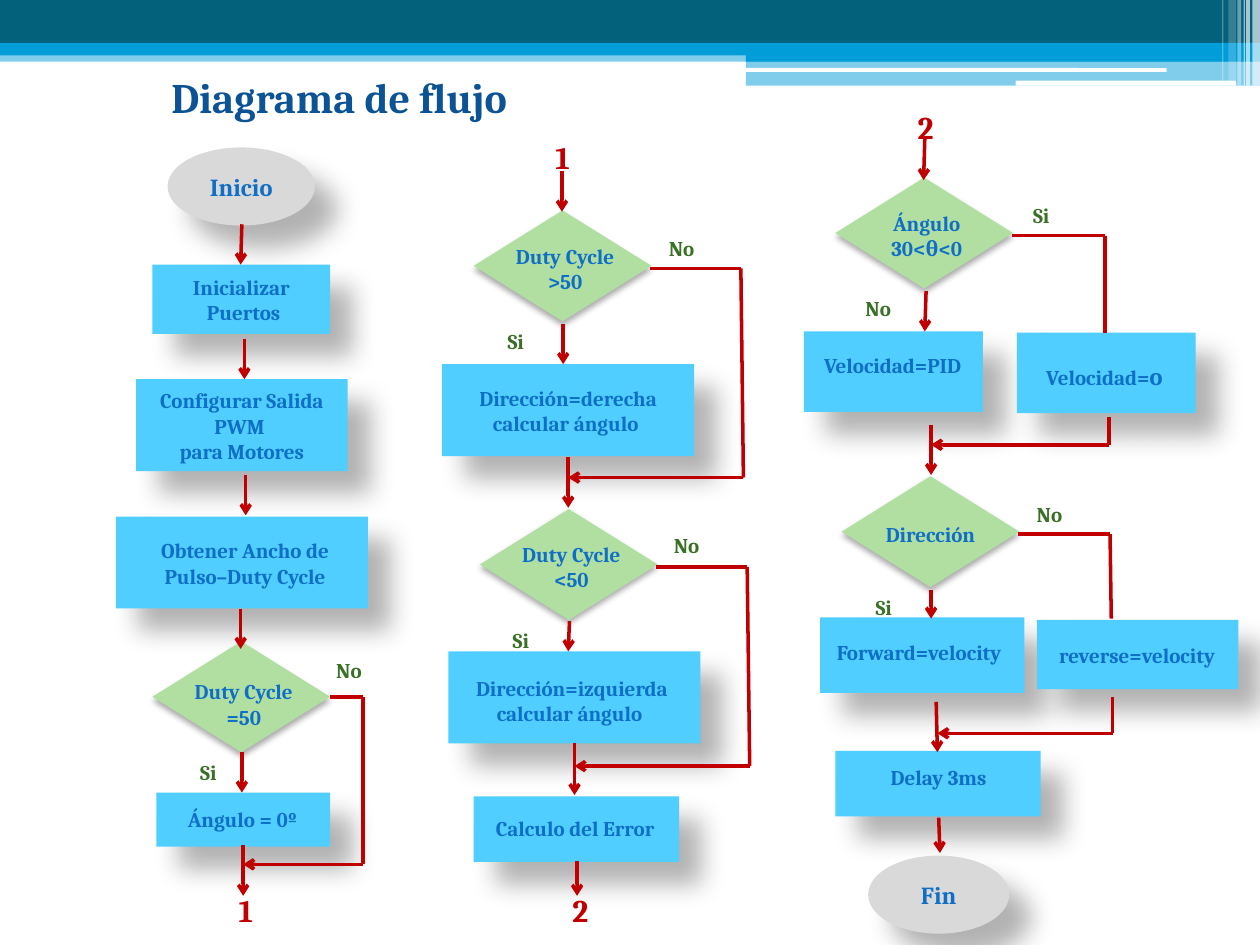
from pptx import Presentation, util as u
from pptx.dml.color import RGBColor
from pptx.enum import shapes as s, text as t
from pptx.oxml import parse_xml
from pptx.oxml.ns import nsdecls, qn
from lxml import etree

FONT = "Cambria"
BLUE, RED, GREEN = "0F6FC6", "C00000", "387026"
KIND = s.MSO_SHAPE
LEFT, MID = t.PP_ALIGN.LEFT, t.PP_ALIGN.CENTER

bands = [
    (0, 0.4, 10, 0.09, "009DD9", 50),
    (0, 0, 10, 0.34, "04617B", 100),
    (0, 0.34, 10, 0.1, "009DD9", 100),
    (5.92, 0.39, 4.08, 0.1, "009DD9", 100),
    (5.92, 0.48, 4.08, 0.2, "009DD9", 50),
]
pills = [(5.91, 0.54, 3.35, 0.03), (8.06, 0.64, 1.75, 0.04)]
stripes = [
    (9.94, 0.06, 0.68, 65), (9.89, 0.03, 0.68, 65), (9.87, 0.01, 0.68, 60),
    (9.82, 0.03, 0.68, 40), (9.75, 0.06, 0.64, 20), (9.7, 0.01, 0.64, 30),
]
boxes = [
    (1.21, 2.1, 1.41, 0.55), (1.08, 3.01, 1.68, 0.73), (0.92, 4.1, 2, 0.73),
    (1.24, 6.29, 1.38, 0.43), (3.51, 2.89, 2, 0.73), (3.56, 5.17, 2, 0.73),
    (3.76, 6.32, 1.63, 0.52), (6.38, 2.63, 1.42, 0.64), (6.51, 4.9, 1.62, 0.6),
    (6.63, 5.96, 1.63, 0.52), (8.07, 2.64, 1.42, 0.64), (8.23, 4.92, 1.6, 0.55),
]
tests = [(1.21, 5.09), (3.76, 1.67), (3.81, 4.04), (6.63, 1.41), (6.68, 3.78)]
ends = [("Inicio", 1.33, 1.17, 1.17), ("Fin", 6.89, 6.79, 1.12)]

arrows = [
    [(1.92, 1.78), (1.91, 2.1)], [(1.94, 2.69), (1.94, 3.01)],
    [(1.95, 3.77), (1.95, 4.09)], [(1.91, 4.83), (1.91, 5.15)],
    [(1.92, 5.97), (1.92, 6.29)], [(1.93, 6.71), (1.93, 7.11)],
    [(4.46, 1.36), (4.46, 1.68)], [(4.47, 2.57), (4.47, 2.89)],
    [(4.51, 3.63), (4.51, 4.03)], [(4.52, 4.93), (4.51, 5.17)],
    [(4.56, 5.9), (4.56, 6.31)], [(4.58, 6.83), (4.58, 7.11)],
    [(7.34, 1.1), (7.33, 1.43)], [(7.35, 2.31), (7.34, 2.63)],
    [(7.39, 3.37), (7.39, 3.77)], [(7.39, 4.68), (7.39, 4.91)],
    [(7.43, 5.57), (7.44, 5.97)], [(7.45, 6.49), (7.46, 6.77)],
    [(2.62, 5.53), (2.88, 5.53), (2.88, 6.86), (1.93, 6.86)],
    [(5.16, 2.13), (5.88, 2.13), (5.9, 3.79), (4.51, 3.79)],
    [(5.21, 4.5), (5.93, 4.5), (5.95, 6.08), (4.56, 6.08)],
    [(8.8, 3.31), (8.8, 3.53), (7.39, 3.53)],
    [(8.83, 5.53), (8.83, 5.82), (7.44, 5.82)],
]
plain = [
    [(8.03, 1.87), (8.77, 1.87), (8.77, 2.64)],
    [(8.08, 4.24), (8.81, 4.24), (8.82, 4.91)],
]

labels = [
    (["Configurar Salida PWM ", "para Motores"], 1.12, 3.03, 1.6, 3),
    (["Obtener Ancho de Pulso–Duty Cycle"], 1.05, 4.22, 1.79, 2),
    (["Duty Cycle =50"], 1.35, 5.34, 1.17, 2),
    (["Duty Cycle >50"], 3.9, 1.88, 1.17, 2),
    (["Dirección=derecha calcular ángulo "], 3.56, 3.01, 1.9, 2),
    (["Duty Cycle <50"], 3.95, 4.25, 1.17, 2),
    (["Dirección=izquierda calcular ángulo "], 3.51, 5.31, 2.06, 2),
    (["Ángulo 30<θ<0"], 6.77, 1.62, 1.17, 2),
    (["Velocidad=PID"], 6.31, 2.75, 1.55, 1),
    (["Dirección"], 6.8, 4.09, 1.17, 1),
    (["Forward=velocity"], 6.4, 5.03, 1.79, 1),
    (["reverse=velocity"], 8.13, 5.05, 1.79, 1),
]
tight = [
    (["Inicializar", " Puertos"], 1.37, 2.13, 1.09, 2),
    (["Ángulo = 0º"], 1.31, 6.35, 1.23, 1),
    (["Calculo del Error"], 3.72, 6.42, 1.69, 1),
    (["Delay 3ms"], 6.9, 6.02, 1.1, 1),
]
marks = [("1", 1.74, 7.02, 0.42), ("1", 4.23, 1.05, 0.47),
         ("2", 4.38, 7.02, 0.45), ("2", 7.12, 0.81, 0.45)]
flags = [
    ("No", 2.57, 5.17, 0.63), ("Si", 1.49, 5.98, 0.58),
    ("No", 5.21, 1.82, 0.63), ("Si", 3.93, 2.56, 0.42),
    ("No", 5.25, 4.18, 0.63), ("Si", 3.97, 4.93, 0.42),
    ("No", 6.77, 2.3, 0.45), ("Si", 8.1, 1.56, 0.42),
    ("No", 8.13, 3.93, 0.63), ("Si", 6.85, 4.67, 0.42),
]
DEEP = (30, 15, 18, 45)
SOFT = (32, 3.5, 2.2, 90)

deck = Presentation()
deck.slide_width, deck.slide_height = u.Inches(10), u.Inches(7.5)
slide = deck.slides.add_slide(deck.slide_layouts[5])


def rgb(code):
    return RGBColor.from_string(code)


def inch(*nums):
    return [u.Inches(n) for n in nums]


def shape(kind, at, fill, alpha=100, glow=None):
    item = slide.shapes.add_shape(kind, *inch(*at))
    item.shadow.inherit = False
    item.fill.solid()
    item.fill.fore_color.rgb = rgb(fill)
    item.line.fill.background()
    if alpha < 100:
        tone = item.fill._xPr.find(".//" + qn("a:srgbClr"))
        etree.SubElement(tone, qn("a:alpha"), val=str(alpha * 1000))
    if glow:
        dark, blur, dist, turn = glow
        item._element.spPr.find(qn("a:effectLst")).append(parse_xml(
            f'<a:outerShdw {nsdecls("a")} blurRad="{u.Pt(blur)}" '
            f'dist="{u.Pt(dist)}" dir="{turn * 60000}" algn="ctr" '
            f'rotWithShape="0"><a:srgbClr val="000000">'
            f'<a:alpha val="{dark * 1000}"/></a:srgbClr></a:outerShdw>'))
    return item


def add_run(para, words, size, color):
    run = para.add_run()
    run.text = words
    font = run.font
    font.name, font.size, font.bold = FONT, u.Pt(size), True
    font.color.rgb = rgb(color)


def write(frame, lines, size, color, align=MID):
    for n, words in enumerate(lines):
        para = frame.add_paragraph() if n else frame.paragraphs[0]
        para.alignment = align
        add_run(para, words, size, color)


def label(lines, at, size=12, color=BLUE, align=MID, wrap=True):
    frame = slide.shapes.add_textbox(*inch(*at)).text_frame
    frame.word_wrap = wrap
    write(frame, lines, size, color, align)
    return frame


def trace(points, arrow):
    for n, (a, b) in enumerate(zip(points, points[1:]), 2):
        line = slide.shapes.add_connector(
            s.MSO_CONNECTOR.STRAIGHT, *inch(*a, *b))
        line.line.color.rgb = rgb(RED)
        line.line.width = u.Pt(2)
        if arrow and n == len(points):
            etree.SubElement(line.line._get_or_add_ln(),
                             qn("a:tailEnd"), type="arrow")
        etree.SubElement(line._element.spPr, qn("a:effectLst"))


for *at, fill, alpha in bands:
    shape(KIND.RECTANGLE, at, fill, alpha)
for at in pills:
    shape(KIND.ROUNDED_RECTANGLE, at, "FFFFFF")
for x, w, h, alpha in stripes:
    shape(KIND.RECTANGLE, (x, 0, w, h), "FFFFFF", alpha)

title = slide.shapes.title
title.left, title.top, title.width, title.height = inch(1.26, 0.52, 4.83, 0.5)
title.text_frame.vertical_anchor = t.MSO_ANCHOR.TOP
write(title.text_frame, ["Diagrama de flujo"], 24, "0B5394", LEFT)

for at in boxes:
    shape(KIND.RECTANGLE, at, "4FCEFF", glow=DEEP)
for x, y in tests:
    shape(KIND.DIAMOND, (x, y, 1.41, 0.88), "B0DFA1", glow=SOFT)
for words, x, y, w in ends:
    oval = shape(KIND.OVAL, (x, y, w, 0.62), "D9D9D9", glow=DEEP)
    oval.text_frame.vertical_anchor = t.MSO_ANCHOR.MIDDLE
    write(oval.text_frame, [words], 14, BLUE)

for points in arrows:
    trace(points, True)
for points in plain:
    trace(points, False)

for group, wrap in ((labels, True), (tight, False)):
    for lines, x, y, w, rows in group:
        label(lines, (x, y, w, 0.1 + 0.2 * rows), wrap=wrap)
speed = label(["Velocidad="], (7.99, 2.82, 1.55, 0.34))
add_run(speed.paragraphs[0], "o", 14, BLUE)
for words, x, y, w in marks:
    label([words], (x, y, w, 0.4), 18, RED)
for words, x, y, w in flags:
    label([words], (x, y, w, 0.3), 12, GREEN, LEFT)

deck.save("out.pptx")
